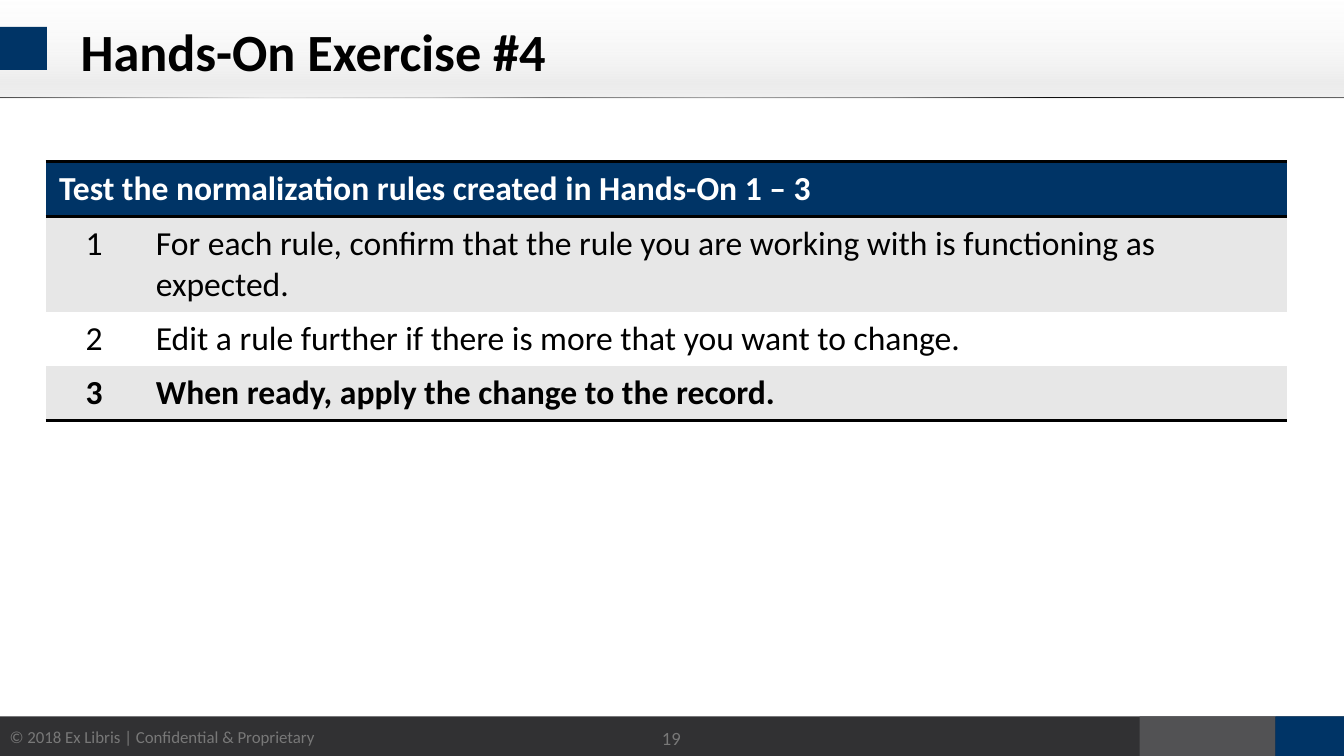
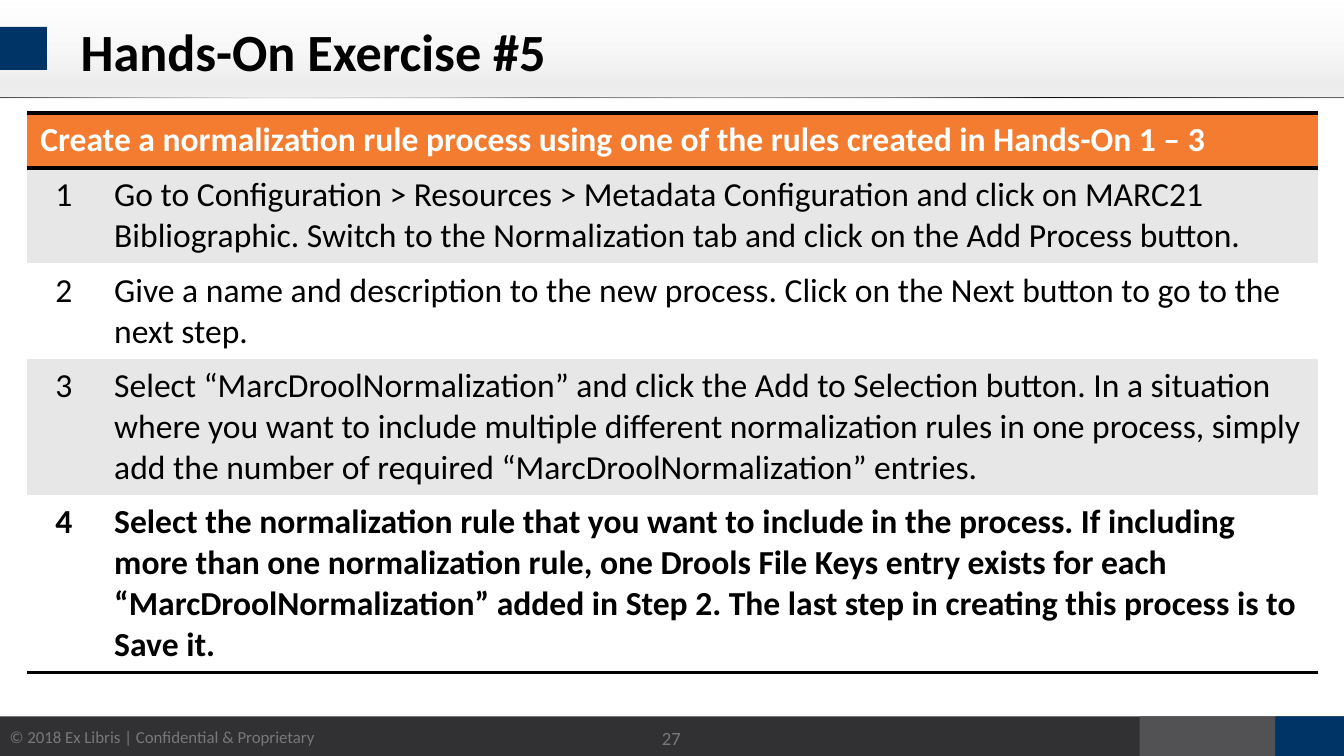
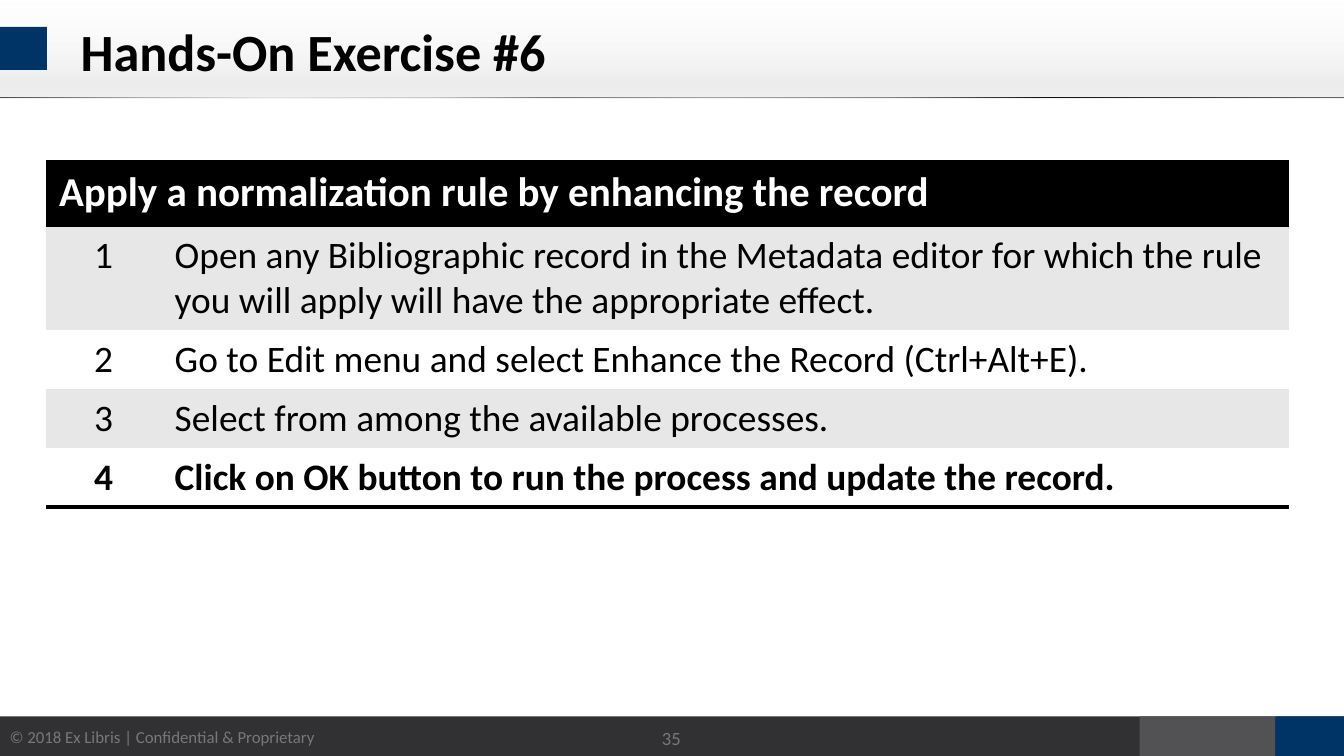
from lxml.etree import SubElement
from pptx import Presentation
from pptx.dml.color import RGBColor
from pptx.enum.shapes import MSO_SHAPE as Shape
from pptx.enum.text import MSO_ANCHOR as Anchor, PP_ALIGN as Align
from pptx.oxml import parse_xml
from pptx.oxml.ns import nsdecls, qn
from pptx.util import Inches, Pt

NAVY = RGBColor(0x00, 0x34, 0x66)
ORANGE = RGBColor(0xF4, 0x7C, 0x30)
BLACK = RGBColor(0x00, 0x00, 0x00)
WHITE = RGBColor(0xFF, 0xFF, 0xFF)
STRIPE = RGBColor(0xE7, 0xE7, 0xE7)
DARK = RGBColor(0x31, 0x31, 0x33)
SLATE = RGBColor(0x52, 0x52, 0x54)
GRAY = RGBColor(0x78, 0x78, 0x78)

FONT = "Calibri"
NO_STYLE = "{2D5ABB26-0587-4C30-8999-92F81FD0307C}"
OWNER = "© 2018 Ex Libris | Confidential & Proprietary"

# Gradient stops: position, colour, opacity (position and opacity in percent)
HEAD_FADE = [(0, "FAFAFA", 12), (66, "D7D7D7", 30),
             (83, "D7D7D7", 47), (100, "E4E4E4", 54)]
RULE_FADE = [(0, "4C4C4C", 100), (11, "B1B1B1", 100), (20, "E2E2E2", 100),
             (32, "C7C7C7", 100), (41, "757575", 100), (53, "A3A3A3", 100),
             (66, "868686", 100), (78, "0F0F0F", 100), (88, "3A3A3A", 100),
             (100, "656565", 100)]

# Bands: left, top, width, height, fill (a colour, or stops and angle)
BANDS = [
    (0, 5.33, 10, 0.32, DARK),
    (8.48, 5.33, 1.01, 0.32, SLATE),
    (9.49, 5.33, 0.51, 0.32, NAVY),
    (-0.01, 0.01, 10.01, 0.72, (HEAD_FADE, 270)),
    (0, 0.2, 0.35, 0.32, NAVY),
    (0, 0.72, 10, 0.01, (RULE_FADE, 0)),
]

# Steps: text, number of lines
SLIDES = [
    dict(title="Hands-On Exercise #4", page="19", at=(0.34, 1.2),
         cols=(0.72, 8.52), fill=NAVY, sizes=(18, 18), top=0.41,
         head="Test the normalization rules created in Hands-On 1 – 3",
         steps=[
             ("For each rule, confirm that the rule you are working with is "
              "functioning as expected.", 2),
             ("Edit a rule further if there is more that you want to change.", 1),
             ("When ready, apply the change to the record.", 1),
         ]),
    dict(title="Hands-On Exercise #5", page="27", at=(0.2, 0.84),
         cols=(0.55, 9.06), fill=ORANGE, sizes=(18, 18), top=0.41,
         head="Create a normalization rule process using one of the rules "
              "created in Hands-On 1 – 3",
         steps=[
             ("Go to Configuration > Resources > Metadata Configuration and "
              "click on MARC21 Bibliographic. Switch to the Normalization tab "
              "and click on the Add Process button.", 2),
             ("Give a name and description to the new process. Click on the "
              "Next button to go to the next step.", 2),
             ("Select “MarcDroolNormalization” and click the Add to Selection "
              "button. In a situation where you want to include multiple "
              "different normalization rules in one process, simply add the "
              "number of required “MarcDroolNormalization” entries.", 3),
             ("Select the normalization rule that you want to include in the "
              "process. If including more than one normalization rule, one "
              "Drools File Keys entry exists for each “MarcDroolNormalization” "
              "added in Step 2. The last step in creating this process is to "
              "Save it.", 4),
         ]),
    dict(title="Hands-On Exercise #6", page="35", at=(0.34, 1.2),
         cols=(0.86, 8.39), fill=BLACK, sizes=(22, 20), top=0.48,
         head="Apply a normalization rule by enhancing the record",
         steps=[
             ("Open any Bibliographic record in the Metadata editor for which "
              "the rule you will apply will have the appropriate effect.", 2),
             ("Go to Edit menu and select Enhance the Record (Ctrl+Alt+E).", 1),
             ("Select from among the available processes.", 1),
             ("Click on OK button to run the process and update the record.", 1),
         ]),
]


def write(frame, text, size, color, bold=False, align=Align.LEFT):
    para = frame.paragraphs[0]
    para.text = text
    para.alignment = align
    font = para.font
    font.name, font.size, font.bold = FONT, Pt(size), bold
    font.color.rgb = color


def label(slide, box, text, size):
    shape = slide.shapes.add_textbox(*map(Inches, box))
    write(shape.text_frame, text, size, GRAY, align=Align.CENTER)
    return shape


def fade(shape, stops, angle):
    shape.fill.gradient()
    shape.fill.gradient_angle = angle
    group = shape._element.spPr.find(qn("a:gradFill")).find(qn("a:gsLst"))
    for old in list(group):
        group.remove(old)
    for pos, color, alpha in stops:
        stop = SubElement(group, qn("a:gs"), pos=str(pos * 1000))
        tint = SubElement(stop, qn("a:srgbClr"), val=color)
        SubElement(tint, qn("a:alpha"), val=str(alpha * 1000))


def add_bands(slide, layout):
    """Draw the shared bands and owner line, then hand them to the layout."""
    parts = []
    for *box, fill in BANDS:
        band = slide.shapes.add_shape(Shape.RECTANGLE, *map(Inches, box))
        band.shadow.inherit = False
        band.line.fill.background()
        if isinstance(fill, RGBColor):
            band.fill.solid()
            band.fill.fore_color.rgb = fill
        else:
            fade(band, *fill)
        parts.append(band)
    owner = label(slide, (-0.04, 5.36, 2.49, 0.25), OWNER, 9)
    owner.text_frame.word_wrap = False
    for part in parts + [owner]:
        layout.shapes._spTree.append(part._element)


def edge(cell, *tags):
    props = cell._tc.get_or_add_tcPr()
    for spot, tag in enumerate(tags):
        props.insert(spot, parse_xml(
            f'<a:{tag} {nsdecls("a")} w="25400"><a:solidFill>'
            f'<a:srgbClr val="{BLACK}"/></a:solidFill></a:{tag}>'))


def paint(cell, color):
    cell.fill.solid()
    cell.fill.fore_color.rgb = color


def add_steps(slide, data):
    steps, cols = data["steps"], data["cols"]
    big, size = data["sizes"]
    highs = [data["top"]] + [0.1 + n * size * 1.22 / 72 for _, n in steps]
    left, top = data["at"]
    table = slide.shapes.add_table(
        len(highs), len(cols), Inches(left), Inches(top),
        Inches(sum(cols)), Inches(sum(highs))).table
    table._tbl.tblPr.find(qn("a:tableStyleId")).text = NO_STYLE
    for col, width in zip(table.columns, cols):
        col.width = Inches(width)
    for row, high in zip(table.rows, highs):
        row.height = Inches(high)

    # Heading row
    for cell in table.rows[0].cells:
        paint(cell, data["fill"])
        edge(cell, "lnT", "lnB")
    head = table.cell(0, 0)
    head.merge(table.cell(0, 1))
    write(head.text_frame, data["head"], big, WHITE, True)

    # Numbered steps, the last one in bold
    for num, (text, _) in enumerate(steps, 1):
        last = num == len(steps)
        mark, body = table.rows[num].cells
        write(mark.text_frame, str(num), size, BLACK, last, Align.CENTER)
        write(body.text_frame, text, size, BLACK, last)
        for cell in (mark, body):
            paint(cell, STRIPE if num % 2 else WHITE)
            if last:
                edge(cell, "lnB")


def add_title(slide, text):
    title = slide.shapes.title
    title.left, title.top, title.width, title.height = map(
        Inches, (0.5, 0.06, 9.07, 0.63))
    title.text_frame.vertical_anchor = Anchor.MIDDLE
    write(title.text_frame, text, 28, BLACK, True)


def main():
    deck = Presentation()
    # Widescreen, 16 by 9
    deck.slide_width, deck.slide_height = Inches(10), Inches(10 * 9 / 16)
    layout = deck.slide_layouts[5]
    for data in SLIDES:
        slide = deck.slides.add_slide(layout)
        if data is SLIDES[0]:
            add_bands(slide, layout)
        add_title(slide, data["title"])
        page = label(slide, (4.7, 5.29, 0.59, 0.4), data["page"], 10)
        page.text_frame.vertical_anchor = Anchor.MIDDLE
        add_steps(slide, data)
    deck.save("out.pptx")


if __name__ == "__main__":
    main()
